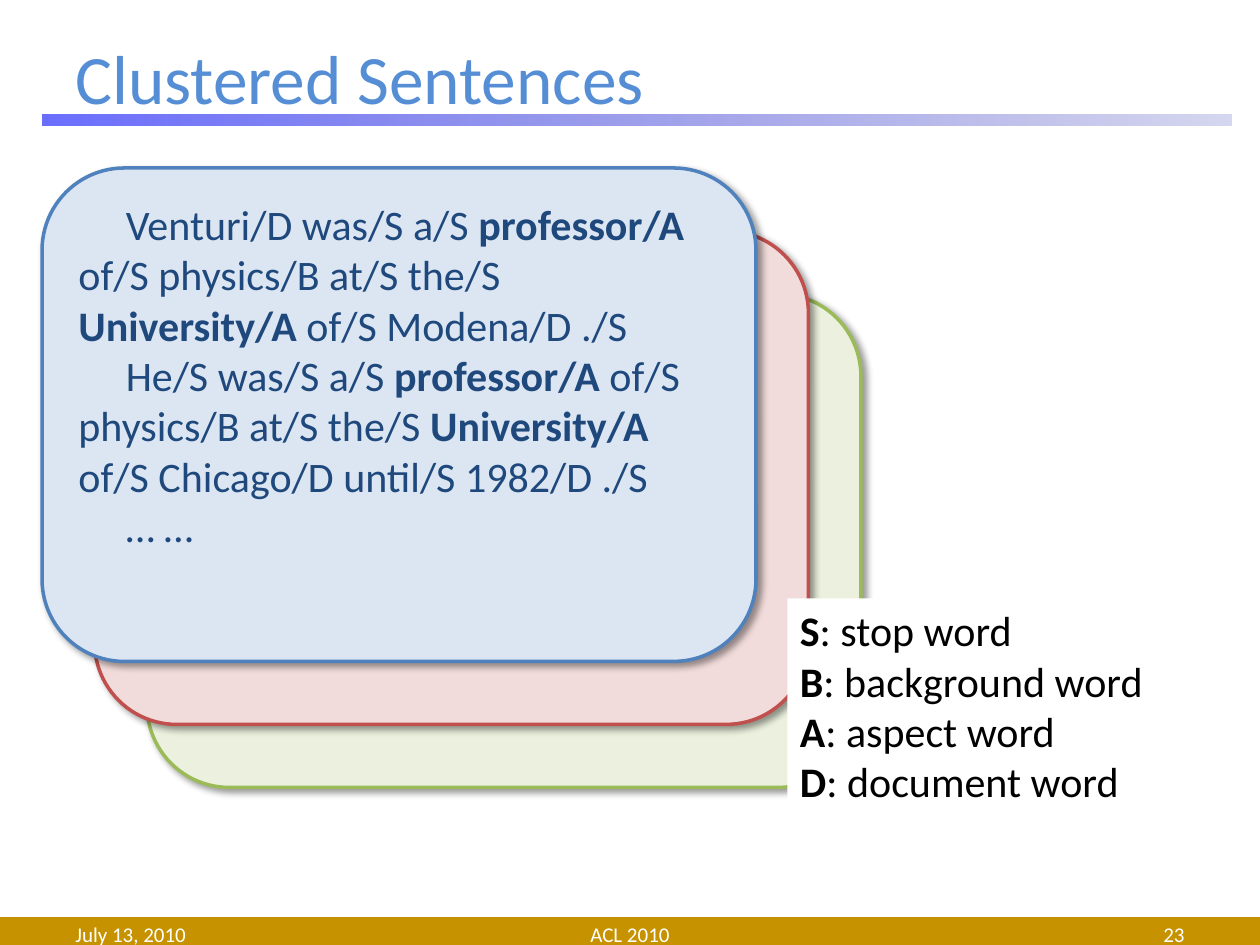
from lxml.etree import SubElement
from pptx import Presentation
from pptx.dml.color import RGBColor
from pptx.enum.shapes import MSO_SHAPE
from pptx.enum.text import MSO_ANCHOR, MSO_AUTO_SIZE, PP_ALIGN
from pptx.oxml.ns import qn
from pptx.util import Pt

FONT = "Calibri"
COLORS = {
    "title": "558ED5", "footer": "C69200", "white": "FFFFFF", "black": "000000",
    "rule_start": "464AFC", "rule_end": "3235B4", "sentence": "1F497D",
    "green": "EBF1DE", "green_line": "9BBB59",
    "red": "F2DCDB", "red_line": "C0504D",
    "blue": "DCE6F2", "blue_line": "4F81BD",
}
SENTENCES = [
    [("Venturi/D was/S a/S ", False), ("professor/A", True),
     (" of/S physics/B at/S the/S ", False), ("University/A", True),
     (" of/S Modena/D ./S", False)],
    [("He/S was/S a/S ", False), ("professor/A", True),
     (" of/S physics/B at/S the/S ", False), ("University/A", True),
     (" of/S Chicago/D until/S 1982/D ./S", False)],
    [("… …", False)],
]
LEGEND = [
    [(letter, True), (f": {meaning} word", False)]
    for letter, meaning in [("S", "stop"), ("B", "background"),
                            ("A", "aspect"), ("D", "document")]
]


def rgb(name):
    return RGBColor.from_string(COLORS[name])


def add_panel(page, kind, box, fill, line=None):
    panel = page.shapes.add_shape(kind, *map(Pt, box))
    panel.shadow.inherit = False
    panel.fill.solid()
    panel.fill.fore_color.rgb = rgb(fill)
    if line:
        panel.line.color.rgb = rgb(line)
        panel.line.width = Pt(2)
    else:
        panel.line.fill.background()
    return panel


def add_shadow(panel):
    effects = panel._element.spPr.find(qn("a:effectLst"))
    shadow = SubElement(effects, qn("a:outerShdw"), blurRad=str(Pt(4)),
                        dist=str(Pt(3)), dir="2700000", algn="tl", rotWithShape="0")
    color = SubElement(shadow, qn("a:srgbClr"), val=COLORS["black"])
    SubElement(color, qn("a:alpha"), val="40000")


def write_paragraphs(frame, paragraphs, size, color, align=PP_ALIGN.LEFT, indent=0):
    frame.word_wrap = True
    for index, spans in enumerate(paragraphs):
        para = frame.paragraphs[0] if index == 0 else frame.add_paragraph()
        para.alignment = align
        if indent:
            properties = para._p.get_or_add_pPr()
            properties.set("marL", "0")
            properties.set("indent", str(Pt(indent)))
        for text, bold in spans:
            span = para.add_run()
            span.text = text
            span.font.name = FONT
            span.font.size = Pt(size)
            span.font.bold = bold
            span.font.color.rgb = rgb(color)


def add_label(page, box, text, size, color, align=PP_ALIGN.LEFT):
    frame = page.shapes.add_textbox(*map(Pt, box)).text_frame
    frame.vertical_anchor = MSO_ANCHOR.MIDDLE
    write_paragraphs(frame, [[(text, False)]], size, color, align)


def add_header(page, left, top, width, height):
    rule_height = 6.5
    rule = add_panel(page, MSO_SHAPE.RECTANGLE,
                     (left, top + height - rule_height, width, rule_height), "white")
    rule.fill.gradient()
    rule.fill.gradient_angle = 0
    for stop, color, alpha in zip(rule.fill.gradient_stops,
                                  ("rule_start", "rule_end"), (80, 20)):
        stop.color.rgb = rgb(color)
    for color, alpha in zip(rule._element.spPr.iter(qn("a:srgbClr")), (80, 20)):
        SubElement(color, qn("a:alpha"), val=str(alpha * 1000))
    add_label(page, (left + 11.5, top, 648, 44.5), "Clustered Sentences", 39.6, "title")


def add_footer(page, left, top, width, height):
    add_panel(page, MSO_SHAPE.RECTANGLE, (left, top, width, height), "footer")
    for offset, label_width, text, align in [
        (36, 168, "July 13, 2010", PP_ALIGN.LEFT),
        (246, 228, "ACL 2010", PP_ALIGN.CENTER),
        (516, 168, "23", PP_ALIGN.RIGHT),
    ]:
        add_label(page, (left + offset, top + 4, label_width, 12), text, 12, "white", align)


def add_card_stack(page, left, top, width, height):
    step_across, step_down = 30, 36
    for depth, color in [(2, "green"), (1, "red"), (0, "blue")]:
        card = add_panel(page, MSO_SHAPE.ROUNDED_RECTANGLE,
                         (left + depth * step_across, top + depth * step_down,
                          width, height), color, f"{color}_line")
        add_shadow(card)
    card.text_frame.vertical_anchor = MSO_ANCHOR.TOP
    write_paragraphs(card.text_frame, SENTENCES, 24, "sentence", indent=27)


def add_legend(page, left, top, width, height):
    legend = add_panel(page, MSO_SHAPE.RECTANGLE, (left, top, width, height), "white")
    legend.text_frame.auto_size = MSO_AUTO_SIZE.SHAPE_TO_FIT_TEXT
    legend.text_frame.vertical_anchor = MSO_ANCHOR.TOP
    write_paragraphs(legend.text_frame, LEGEND, 24, "black")


def main():
    deck = Presentation()
    deck.slide_width, deck.slide_height = Pt(720), Pt(540)
    page = deck.slides.add_slide(deck.slide_layouts[6])
    add_footer(page, 0, 524, 720, 18)
    add_header(page, 24.5, 21.5, 679, 50.5)
    add_card_stack(page, 24, 96, 408, 282)
    add_legend(page, 450, 342, 246, 124)
    deck.save("out.pptx")


if __name__ == "__main__":
    main()
